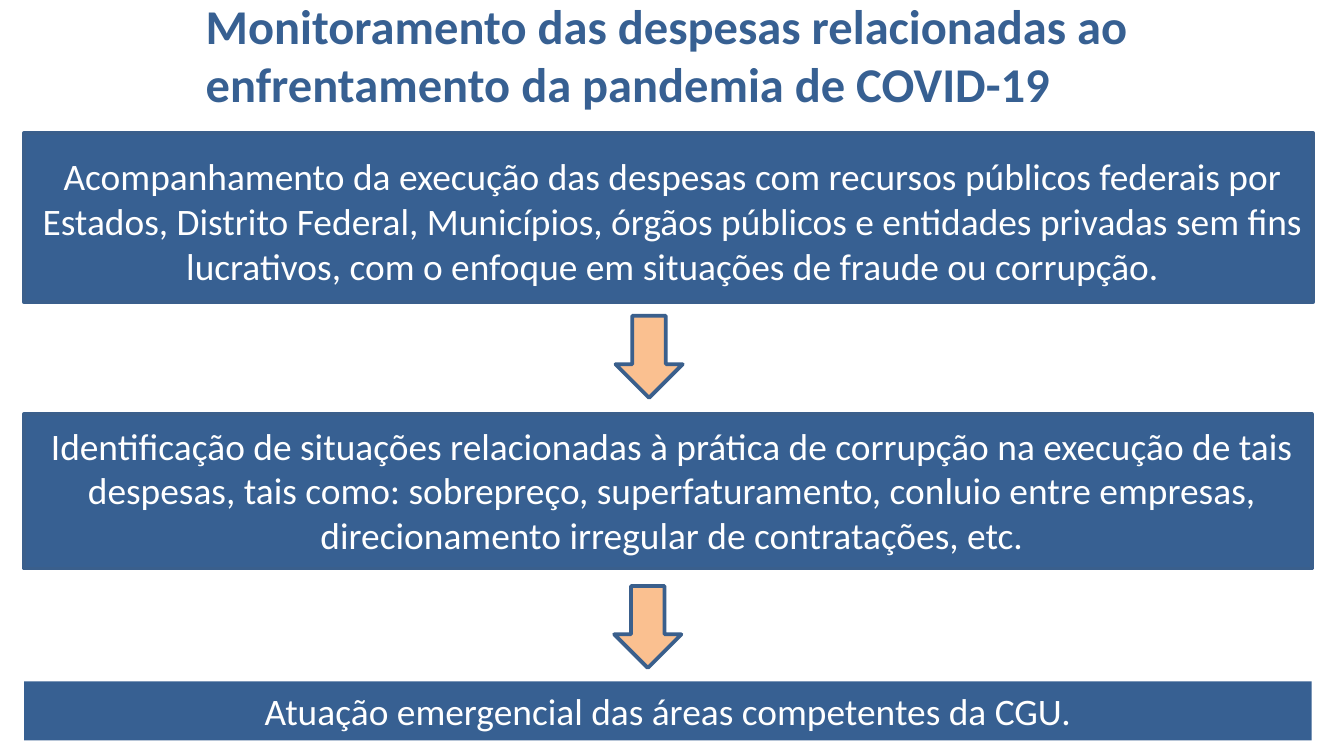
from dataclasses import dataclass

from pptx import Presentation
from pptx import util as u
from pptx.dml.color import RGBColor
from pptx.enum import shapes, text


@dataclass(frozen=True)
class Theme:
    font: str = "Calibri"
    blue: str = "376092"
    outline: str = "3A5F8C"
    peach: str = "FAC090"
    white: str = "FFFFFF"
    title_size: int = 26
    body_size: int = 20
    line_width: int = 2


THEME = Theme()
WIDTH = u.Inches(10)
HEIGHT = WIDTH * 9 // 16
STEP_LEFT = 0.18
ARROW_WIDTH, ARROW_HEIGHT = 0.5, 0.61
TITLE = ("Monitoramento das despesas relacionadas ao "
         "enfrentamento da pandemia de COVID-19")

# Each step: top, width, height, (left, top, right) insets, outlined, wording
STEPS = [
    (0.99, 9.59, 1.26, (0.08, 0.09, 0.02), True,
     "Acompanhamento da execução das despesas com recursos públicos federais "
     "por Estados, Distrito Federal, Municípios, órgãos públicos e entidades "
     "privadas sem fins lucrativos, com o enfoque em situações de fraude ou "
     "corrupção."),
    (3.08, 9.58, 1.15, (0.08, 0.03, 0.02), True,
     "Identificação de situações relacionadas à prática de corrupção na "
     "execução de tais despesas, tais como: sobrepreço, superfaturamento, "
     "conluio entre empresas, direcionamento irregular de contratações, etc."),
    (5.07, 9.58, 0.44, (0.05, 0.05, 0.05), False,
     "Atuação emergencial das áreas competentes da CGU."),
]
# Left and top of the arrow after each step but the last
ARROWS = [(4.58, 2.35), (4.57, 4.36)]


def write(frame, wording, *, size, color, bold=False,
          align=text.PP_ALIGN.CENTER):
    frame.word_wrap = True
    frame.auto_size = text.MSO_AUTO_SIZE.NONE
    frame.vertical_anchor = text.MSO_ANCHOR.MIDDLE
    paragraph = frame.paragraphs[0]
    paragraph.alignment = align
    run = paragraph.add_run()
    run.text = wording
    run.font.name = THEME.font
    run.font.size = u.Pt(size)
    run.font.bold = bold
    run.font.color.rgb = RGBColor.from_string(color)


def add_block(slide, kind, left, top, width, height, fill, outlined=True):
    block = slide.shapes.add_shape(
        kind, *map(u.Inches, (left, top, width, height)))
    block.shadow.inherit = False
    block.fill.solid()
    block.fill.fore_color.rgb = RGBColor.from_string(fill)
    if outlined:
        block.line.color.rgb = RGBColor.from_string(THEME.outline)
        block.line.width = u.Pt(THEME.line_width)
    else:
        block.line.fill.background()
    return block


def add_title(slide):
    title = slide.shapes.title
    title.left, title.top = u.Inches(1.43), u.Inches(0.01)
    title.width, title.height = u.Inches(8.57), u.Inches(0.78)
    write(title.text_frame, TITLE, size=THEME.title_size, color=THEME.blue,
          bold=True, align=text.PP_ALIGN.LEFT)


def add_step(slide, top, width, height, insets, outlined, wording):
    step = add_block(slide, shapes.MSO_SHAPE.RECTANGLE, STEP_LEFT, top,
                     width, height, THEME.blue, outlined)
    frame = step.text_frame
    frame.margin_left, frame.margin_top, frame.margin_right = map(
        u.Inches, insets)
    write(frame, wording, size=THEME.body_size, color=THEME.white)


def main():
    deck = Presentation()
    deck.slide_width, deck.slide_height = WIDTH, HEIGHT
    slide = deck.slides.add_slide(deck.slide_layouts[5])

    add_title(slide)

    # Steps of the monitoring process
    for step in STEPS:
        add_step(slide, *step)

    # Arrows leading from step to step
    for left, top in ARROWS:
        add_block(slide, shapes.MSO_SHAPE.DOWN_ARROW, left, top,
                  ARROW_WIDTH, ARROW_HEIGHT, THEME.peach)

    deck.save("out.pptx")


if __name__ == "__main__":
    main()
